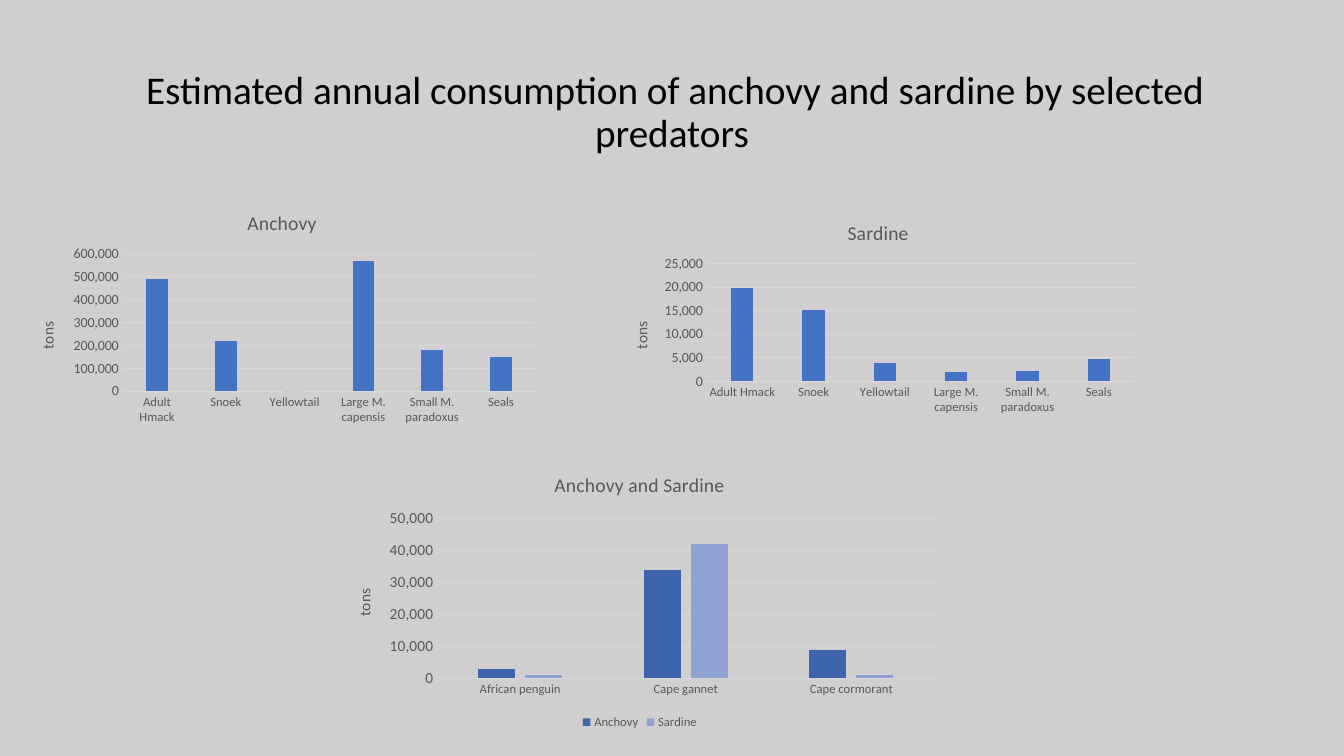
"""Build the slide on yearly anchovy and sardine consumption by predators."""
from pptx import Presentation
from pptx.chart.data import CategoryChartData as Data
from pptx.dml.color import RGBColor
from pptx.enum.chart import XL_CHART_TYPE as Kind, XL_LEGEND_POSITION as Spot
from pptx.enum.chart import XL_TICK_MARK as Tick
from pptx.enum.text import MSO_ANCHOR as Anchor, PP_ALIGN as Align
from pptx.oxml import parse_xml
from pptx.oxml.ns import nsdecls, qn
from pptx.util import Pt

FONT = "Calibri"
BACK = RGBColor(0xD0, 0xCE, 0xCE)
BLACK = RGBColor(0, 0, 0)
GREY = RGBColor(0x59, 0x59, 0x59)
GRID = RGBColor(0xD9, 0xD9, 0xD9)
BLUE = RGBColor(0x44, 0x72, 0xC4)
DARK = RGBColor(0x3C, 0x65, 0xAE)
LIGHT = RGBColor(0x90, 0xA2, 0xD3)

HEADING = "Estimated annual consumption of anchovy and sardine by selected predators"
FISH = ["Adult Hmack", "Snoek", "Yellowtail", "Large M. capensis",
        "Small M. paradoxus", "Seals"]
BIRDS = ["African penguin", "Cape gannet", "Cape cormorant"]

CHARTS = [
    dict(title="Anchovy", wide=54, box=(12, 140, 378, 166), plot=(0.2, 0.25, 0.78, 0.59),
         cats=FISH, top=600000, step=100000, size=10, lift=3,
         series=[("Anchovy", BLUE, (490000, 220000, 0, 570000, 180000, 150000))]),
    dict(title="Sardine", wide=48, box=(436, 147, 382, 153), plot=(0.18, 0.27, 0.8, 0.55),
         cats=FISH, top=25000, step=5000, size=10, lift=3,
         series=[("Sardine", BLUE, (19800, 15100, 3900, 1900, 2200, 4800))]),
    dict(title="Anchovy and Sardine", wide=127, box=(238, 327, 438, 197),
         plot=(0.17, 0.22, 0.81, 0.58),
         cats=BIRDS, top=50000, step=10000, size=11, lift=9,
         series=[("Anchovy", DARK, (3000, 34000, 9000)),
                 ("Sardine", LIGHT, (1000, 42000, 1000))]),
]


def style(font, size, color=GREY):
    font.name, font.size, font.bold = FONT, Pt(size), False
    font.color.rgb = color


def place(node, index, **spots):
    for old in node.findall(qn("c:layout")):
        node.remove(old)
    inner = '<c:layoutTarget val="inner"/>' if "w" in spots else ""
    modes = "".join(f'<c:{key}Mode val="edge"/>' for key in "xy")
    sizes = "".join(f'<c:{key} val="{val:.3f}"/>' for key, val in spots.items())
    node.insert(index, parse_xml(
        f'<c:layout {nsdecls("c")}><c:manualLayout>{inner}{modes}{sizes}'
        '</c:manualLayout></c:layout>'))


def label(title, text, size, x, y):
    frame = title.text_frame
    frame.text = text
    style(frame.paragraphs[0].runs[0].font, size)
    place(title._element, 1, x=x, y=y)
    return frame


def draw(slide, item):
    data = Data(number_format="#,##0")
    data.categories = item["cats"]
    for name, _, vals in item["series"]:
        data.add_series(name, vals)
    wide, high = item["box"][2:]
    chart = slide.shapes.add_chart(
        Kind.COLUMN_CLUSTERED, *map(Pt, item["box"]), data).chart
    style(chart.font, 10, BLACK)

    label(chart.chart_title, item["title"], 14,
          (1 - item["wide"] / wide) / 2, 7 / high)
    chart.chart_title.include_in_layout = False
    spots = dict(zip("xywh", item["plot"]))
    place(chart._chartSpace.chart.plotArea, 0, **spots)

    plot = chart.plots[0]
    plot.gap_width, plot.overlap, plot.vary_by_categories = 219, -27, False
    for bars, (_, color, _) in zip(plot.series, item["series"]):
        bars.format.fill.solid()
        bars.format.fill.fore_color.rgb = color

    cat, val = chart.category_axis, chart.value_axis
    for axis, size in ((cat, 9), (val, item["size"])):
        axis.major_tick_mark = axis.minor_tick_mark = Tick.NONE
        style(axis.tick_labels.font, size)
    val.has_major_gridlines = True
    for line in (cat.format.line, val.major_gridlines.format.line):
        line.color.rgb, line.width = GRID, Pt(0.75)
    val.format.line.fill.background()
    val.minimum_scale, val.maximum_scale = 0, item["top"]
    val.major_unit = item["step"]
    val.tick_labels.number_format = "#,##0"
    val.tick_labels.number_format_is_linked = False
    unit = label(val.axis_title, "tons", 11, 12.5 / wide,
                 spots["y"] + spots["h"] / 2 - item["lift"] / high)
    body = unit._txBody.bodyPr
    body.set("rot", "-5400000")
    body.set("vert", "horz")

    chart.has_legend = len(item["series"]) > 1
    if chart.has_legend:
        chart.legend.position = Spot.BOTTOM
        chart.legend.include_in_layout = False
        style(chart.legend.font, 9)


def main():
    deck = Presentation()
    deck.slide_width, deck.slide_height = Pt(960), Pt(540)
    slide = deck.slides.add_slide(deck.slide_layouts[6])
    slide.background.fill.solid()
    slide.background.fill.fore_color.rgb = BACK

    frame = slide.shapes.add_textbox(*map(Pt, (66, 29, 828, 104))).text_frame
    frame.word_wrap, frame.vertical_anchor = True, Anchor.MIDDLE
    para = frame.paragraphs[0]
    para.alignment, para.line_spacing = Align.CENTER, 0.9
    for text, size in ((" ", 18), (HEADING, 28)):
        run = para.add_run()
        run.text = text
        style(run.font, size, BLACK)

    for item in CHARTS:
        draw(slide, item)
    deck.save("out.pptx")


if __name__ == "__main__":
    main()
